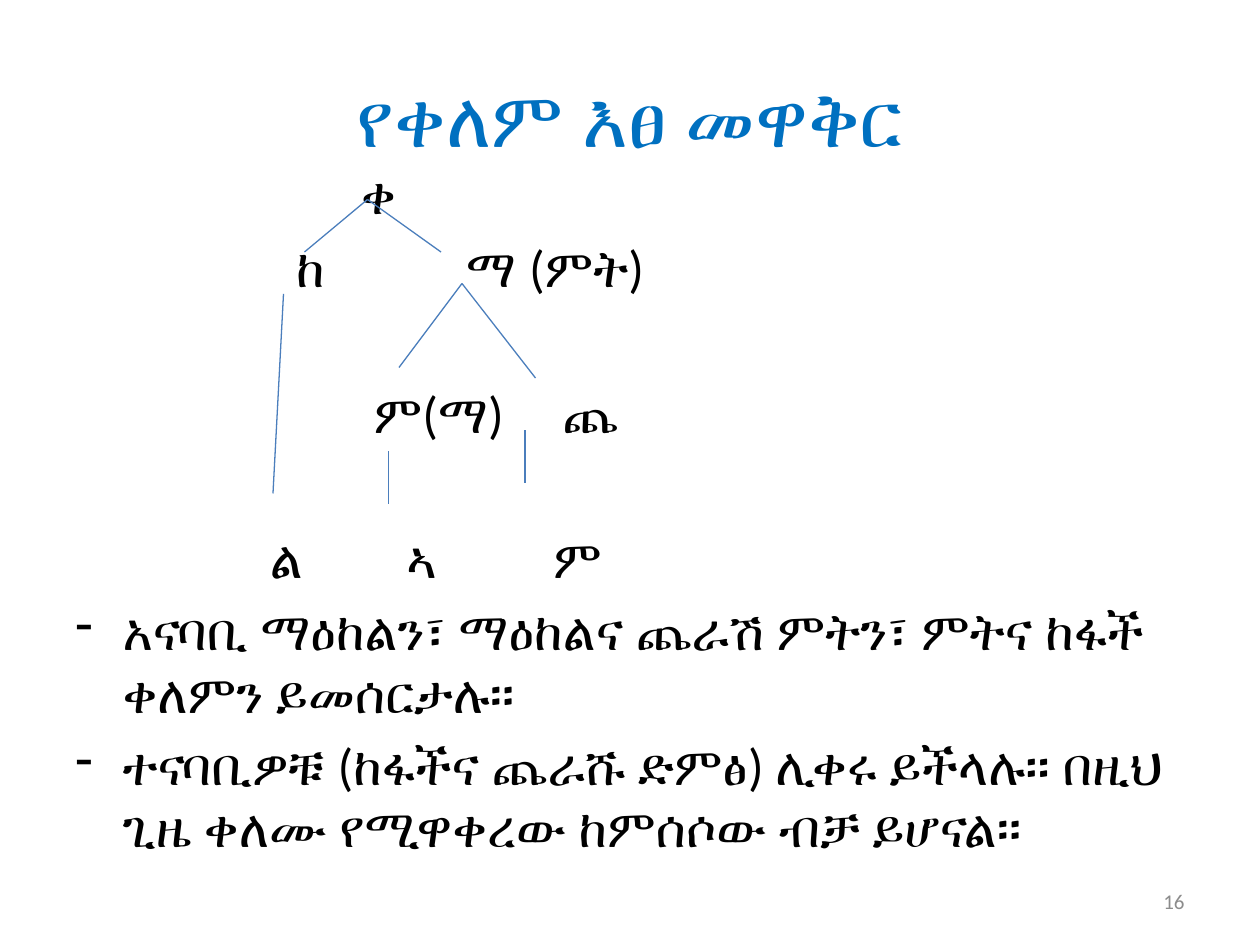
from dataclasses import dataclass

from lxml import etree
from pptx import Presentation
from pptx.dml.color import RGBColor
from pptx.enum.shapes import MSO_CONNECTOR
from pptx.enum.text import MSO_ANCHOR, PP_ALIGN
from pptx.oxml.ns import qn
from pptx.util import Inches, Pt

LEFT, MID, RIGHT = PP_ALIGN.LEFT, PP_ALIGN.CENTER, PP_ALIGN.RIGHT
TOP, CENTER = MSO_ANCHOR.TOP, MSO_ANCHOR.MIDDLE
STRAIGHT = MSO_CONNECTOR.STRAIGHT


@dataclass(frozen=True)
class Theme:
    font: str = "Calibri"
    blue: str = "0070C0"
    black: str = "000000"
    gray: str = "8C8C8C"
    line: str = "4B7EBC"
    head: float = 44
    body: float = 29.6
    foot: float = 12
    rule: float = 0.75


THEME = Theme()
CELL = 1 / 12  # inches in one grid step; the slide is 120 by 90 steps
ROW_TOP, ROW_STEP, ROW_TALL = 15.55, 6.92, 6

# label, column, text row
NODES = [
    ("ቀ", 34.4, 0),
    ("ከ", 28.2, 1), ("ማ (ምት)", 44.4, 1),
    ("ም(ማ)", 35.6, 3), ("ጨ", 53.6, 3),
    ("ል", 25.7, 5), ("ኣ", 38.7, 5), ("ም", 52.7, 5),
]
# start column, start row, end column, end row
EDGES = [
    (35, 19, 29, 24), (35, 19, 42, 24),
    (44, 27, 38, 35), (44, 27, 51, 36),
    (27, 28, 26, 47), (37, 43, 37, 48), (50, 41, 50, 46),
]
NOTES = [
    "አናባቢ ማዕከልን፣ ማዕከልና ጨራሽ ምትን፣ ምትና ከፋች ቀለምን ይመሰርታሉ፡፡",
    "ተናባቢዎቹ (ከፋችና ጨራሹ ድምፅ) ሊቀሩ ይችላሉ፡፡ በዚህ ጊዜ ቀለሙ የሚዋቀረው ከምሰሶው ብቻ ይሆናል፡፡",
]


def grid(*steps):
    return [Inches(step * CELL) for step in steps]


def add_box(slide, area, anchor=TOP):
    frame = slide.shapes.add_textbox(*grid(*area)).text_frame
    frame.word_wrap = True
    frame.vertical_anchor = anchor
    return frame


def style(para, size, color, align=LEFT):
    para.alignment = align
    para.font.name = THEME.font
    para.font.size = Pt(size)
    para.font.color.rgb = RGBColor.from_string(color)


def add_text(slide, text, area, size, color, align):
    para = add_box(slide, area, CENTER).paragraphs[0]
    para.text = text
    style(para, size, color, align)


def add_node(slide, label, col, row):
    """Place a tree label in a box wide enough for one line."""
    wide = 3 * len(label) + 3
    frame = add_box(slide, (col, ROW_TOP + row * ROW_STEP, wide, ROW_TALL))
    frame.margin_left = frame.margin_right = 0
    frame.margin_top = frame.margin_bottom = 0
    para = frame.paragraphs[0]
    para.text = label
    style(para, THEME.body, THEME.black)


def add_edge(slide, ends):
    edge = slide.shapes.add_connector(STRAIGHT, *grid(*ends))
    edge.line.color.rgb = RGBColor.from_string(THEME.line)
    edge.line.width = Pt(THEME.rule)
    etree.SubElement(edge._element.spPr, qn("a:effectLst"))


def add_dash(para):
    """Give the paragraph a dash bullet with a hanging indent."""
    props = para._p.get_or_add_pPr()
    props.set("marL", str(Inches(0.375)))
    props.set("indent", str(-Inches(0.375)))
    etree.SubElement(props, qn("a:buChar")).set("char", "-")


def add_notes(slide, notes, area):
    frame = add_box(slide, area)
    frame.margin_top = 0
    for i, note in enumerate(notes):
        para = frame.add_paragraph() if i else frame.paragraphs[0]
        para.text = note
        add_dash(para)
        if i:
            para.space_before = Pt(THEME.body * 0.2)
        style(para, THEME.body, THEME.black)


def main():
    deck = Presentation()
    deck.slide_width, deck.slide_height = grid(120, 90)
    slide = deck.slides.add_slide(deck.slide_layouts[6])
    add_text(slide, "የቀለም እፀ መዋቅር", (6, 3.6, 108, 15),
             THEME.head, THEME.blue, MID)
    for node in NODES:
        add_node(slide, *node)
    notes_top = ROW_TOP + 6 * ROW_STEP
    add_notes(slide, NOTES, (6, notes_top, 108, 80.4 - notes_top))
    for edge in EDGES:
        add_edge(slide, edge)
    add_text(slide, "16", (86, 83.4, 28, 4.8),
             THEME.foot, THEME.gray, RIGHT)
    deck.save("out.pptx")


if __name__ == "__main__":
    main()
